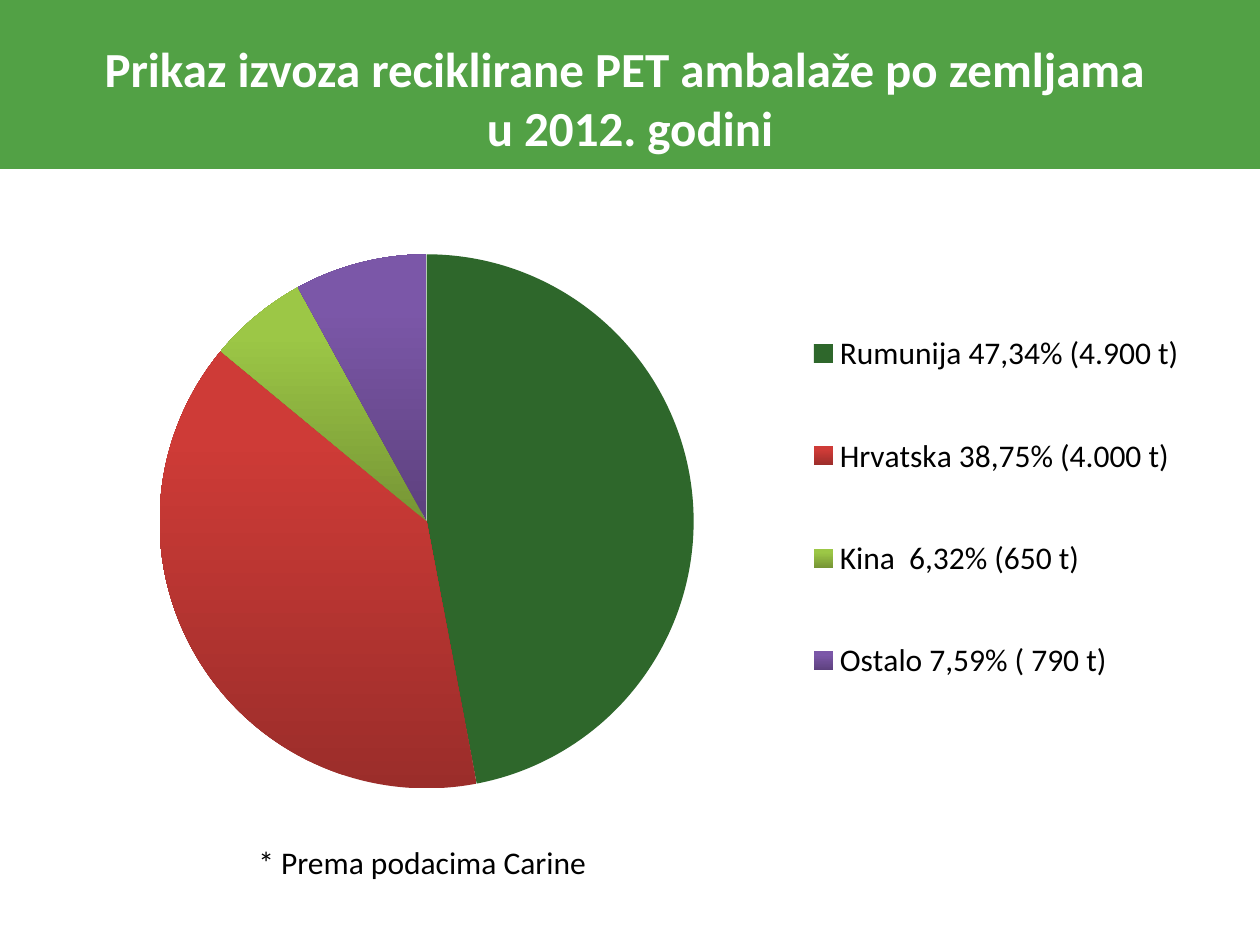
import pptx
import pptx.chart.data
import pptx.dml.color
import pptx.enum.chart
import pptx.enum.shapes
import pptx.enum.text
import pptx.util
from lxml import etree

PX = 914400 // 126
COLORS = {"band": "52A145", "white": "FFFFFF", "black": "000000", "romania": "2E672B"}
GRADIENTS = {1: ("9B2D2A", "CE3B37"), 2: ("769535", "9CC746"), 3: ("5D417E", "7B57A8")}
SHARES = {
    "Rumunija 47,34% (4.900 t)": 47,
    "Hrvatska 38,75% (4.000 t)": 39,
    "Kina  6,32% (650 t)": 6,
    "Ostalo 7,59% ( 790 t)": 8,
}


def rgb(value):
    return pptx.dml.color.RGBColor.from_string(value)


def add_text(text, left, top, width, height, size, color, bold=False, wrap=True,
             align=pptx.enum.text.PP_ALIGN.LEFT, anchor=pptx.enum.text.MSO_ANCHOR.TOP):
    box = page.shapes.add_textbox(left * PX, top * PX, width * PX, height * PX)
    frame = box.text_frame
    frame.word_wrap = wrap
    frame.vertical_anchor = anchor
    para = frame.paragraphs[0]
    para.text = text
    para.alignment = align
    for span in para.runs:
        span.font.name = "Calibri"
        span.font.size = pptx.util.Pt(size)
        span.font.bold = bold
        span.font.color.rgb = rgb(COLORS[color])


deck = pptx.Presentation()
deck.slide_width = pptx.util.Inches(10)
deck.slide_height = pptx.util.Inches(7.5)
page = deck.slides.add_slide(deck.slide_layouts[6])

band = page.shapes.add_shape(pptx.enum.shapes.MSO_SHAPE.RECTANGLE, 0, 0, 1260 * PX, 167 * PX)
band.shadow.inherit = False
band.fill.solid()
band.fill.fore_color.rgb = rgb(COLORS["band"])
band.line.color.rgb = rgb(COLORS["band"])
band.line.width = pptx.util.Pt(2)

add_text("Prikaz izvoza reciklirane PET ambalaže po zemljama \vu 2012. godini",
         63, 0, 1134, 195, 28, "white", bold=True,
         align=pptx.enum.text.PP_ALIGN.CENTER, anchor=pptx.enum.text.MSO_ANCHOR.MIDDLE)

data = pptx.chart.data.CategoryChartData()
data.categories = list(SHARES)
data.add_series("Series 1", list(SHARES.values()))
chart = page.shapes.add_chart(pptx.enum.chart.XL_CHART_TYPE.PIE,
                              29 * PX, 236 * PX, 1187 * PX, 571 * PX, data).chart
chart.has_title = False
chart.font.name = "Calibri"
chart.font.size = pptx.util.Pt(18)
chart.font.color.rgb = rgb(COLORS["black"])
chart.has_legend = True
chart.legend.position = pptx.enum.chart.XL_LEGEND_POSITION.RIGHT
chart.legend.include_in_layout = False

points = chart.plots[0].series[0].points
points[0].format.fill.solid()
points[0].format.fill.fore_color.rgb = rgb(COLORS["romania"])
for index, (dark, light) in GRADIENTS.items():
    fill = points[index].format.fill
    fill.gradient()
    fill.gradient_angle = 90
    for stop, color, position in zip(fill.gradient_stops, (dark, light), (0, 0.8)):
        stop.color.rgb = rgb(color)
        stop.position = position

# Manual layouts, as fractions of the chart: left, top, width, height
C = "{http://schemas.openxmlformats.org/drawingml/2006/chart}"
plot_area = chart._chartSpace.find(f".//{C}plotArea")
legend = chart._chartSpace.find(f".//{C}legend")
for parent, place, fractions, inner in (
    (plot_area, 0, (0.11, 0.03, 0.45, 0.94), True),
    (legend, 1, (0.65, 0.06, 0.33, 0.83), False),
):
    for old in parent.findall(f"{C}layout"):
        parent.remove(old)
    layout = etree.Element(f"{C}layout")
    manual = etree.SubElement(layout, f"{C}manualLayout")
    if inner:
        etree.SubElement(manual, f"{C}layoutTarget", val="inner")
    for tag in ("xMode", "yMode"):
        etree.SubElement(manual, C + tag, val="edge")
    for tag, fraction in zip("xywh", fractions):
        etree.SubElement(manual, C + tag, val=str(fraction))
    parent.insert(place, layout)

add_text("* Prema podacima Carine", 246, 837, 357, 50, 18, "black", wrap=False)

deck.save("out.pptx")
